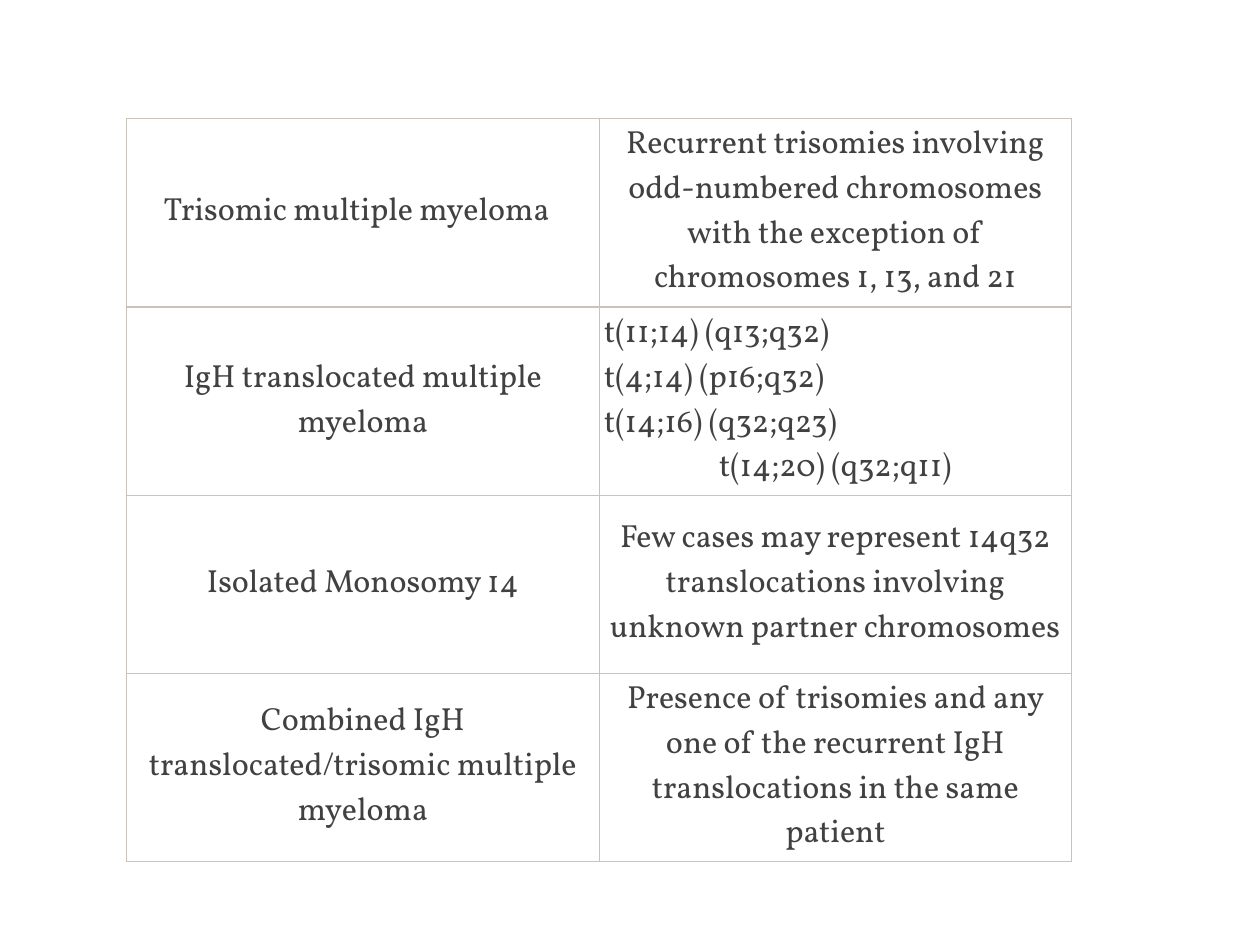
from lxml.etree import SubElement
from pptx import Presentation
from pptx.dml.color import RGBColor
from pptx.enum.text import MSO_ANCHOR as Anchor, PP_ALIGN as Align
from pptx.oxml.ns import qn
from pptx.util import Pt

PX = 12700
COLORS = {"text": "414141", "border": "C9C3BA"}
FONT = "Vollkorn"
COLUMN_WIDTH, ROW_HEIGHT, CELL_MARGIN = 384, 144, 4

SUBTYPES = [
    (
        "Trisomic multiple myeloma\t",
        "Recurrent trisomies involving odd‐numbered chromosomes "
        "with the exception of chromosomes 1, 13, and 21",
    ),
    (
        "IgH translocated multiple myeloma",
        "t(11;14) (q13;q32)\nt(4;14) (p16;q32)\n"
        "t(14;16) (q32;q23)\nt(14;20) (q32;q11)",
    ),
    (
        "Isolated Monosomy 14",
        "Few cases may represent 14q32 translocations involving "
        "unknown partner chromosomes",
    ),
    (
        "Combined IgH translocated/trisomic multiple myeloma",
        "Presence of trisomies and any one of the recurrent IgH "
        "translocations in the same patient",
    ),
]


def px(length):
    return length * PX


def add_borders(cell):
    properties = cell._tc.get_or_add_tcPr()
    for side in ("lnL", "lnR", "lnT", "lnB"):
        line = SubElement(properties, qn(f"a:{side}"), w=str(Pt(1)))
        fill = SubElement(line, qn("a:solidFill"))
        SubElement(fill, qn("a:srgbClr"), val=COLORS["border"])


def fill_cell(cell, text):
    cell.margin_left = cell.margin_right = px(CELL_MARGIN)
    cell.margin_top = cell.margin_bottom = px(CELL_MARGIN)
    cell.vertical_anchor = Anchor.MIDDLE
    add_borders(cell)
    cell.fill.background()
    cell.text_frame.text = text
    paragraphs = cell.text_frame.paragraphs
    for paragraph in paragraphs:
        paragraph.alignment = Align.LEFT
        paragraph.font.name = FONT
        paragraph.font.size = Pt(26)
        paragraph.font.color.rgb = RGBColor.from_string(COLORS["text"])
    paragraphs[-1].alignment = Align.CENTER


def add_subtype_table(slide, left, top, rows):
    row_count, column_count = len(rows), len(rows[0])
    table = slide.shapes.add_table(
        row_count, column_count, px(left), px(top),
        px(COLUMN_WIDTH * column_count), px(ROW_HEIGHT * row_count),
    ).table
    table.first_row = table.horz_banding = False
    for row, texts in zip(table.rows, rows):
        for cell, text in zip(row.cells, texts):
            fill_cell(cell, text)


def main():
    presentation = Presentation()
    presentation.slide_width = px(1024)
    presentation.slide_height = px(768)
    slide = presentation.slides.add_slide(presentation.slide_layouts[6])
    add_subtype_table(slide, 103, 96, SUBTYPES)
    presentation.save("out.pptx")


if __name__ == "__main__":
    main()
